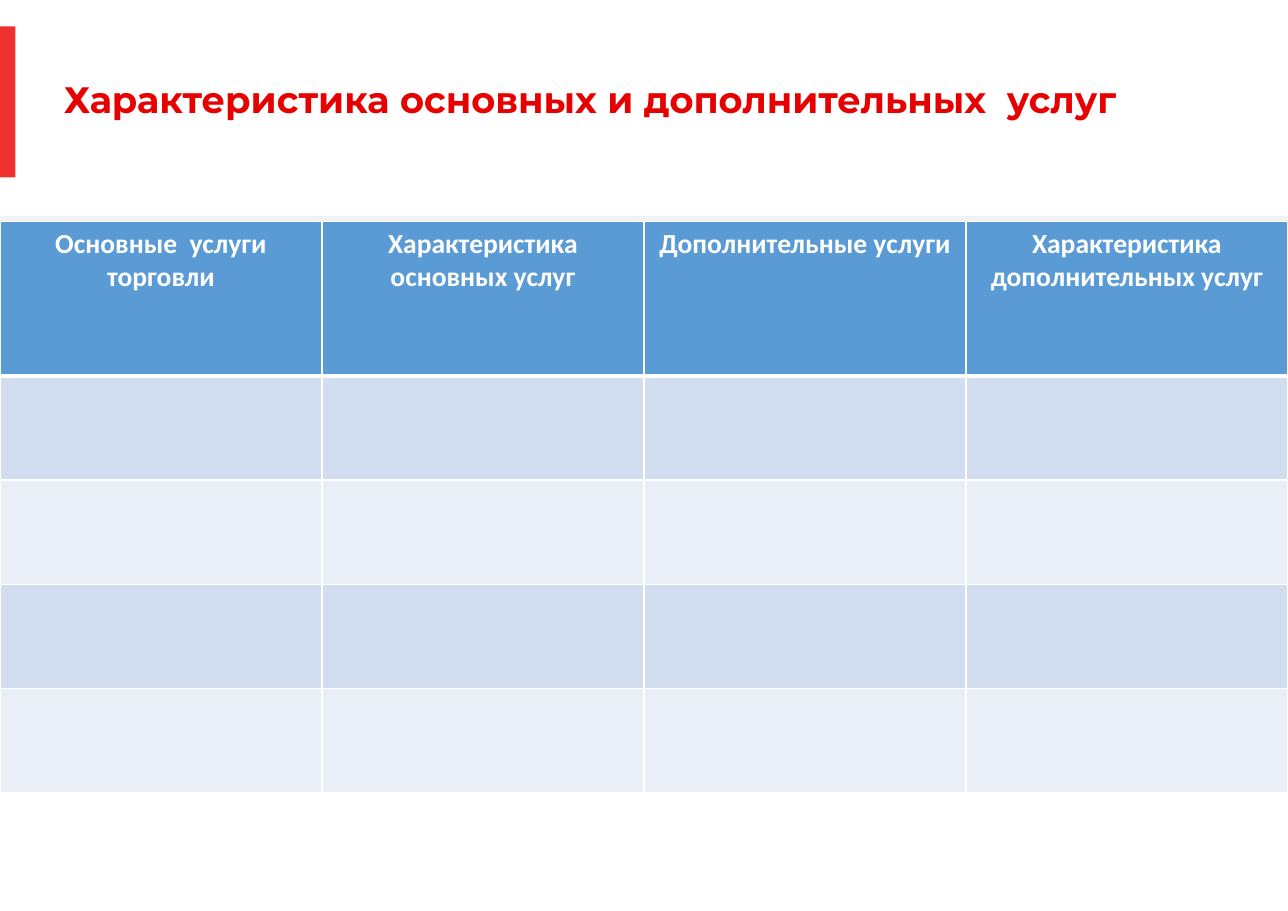
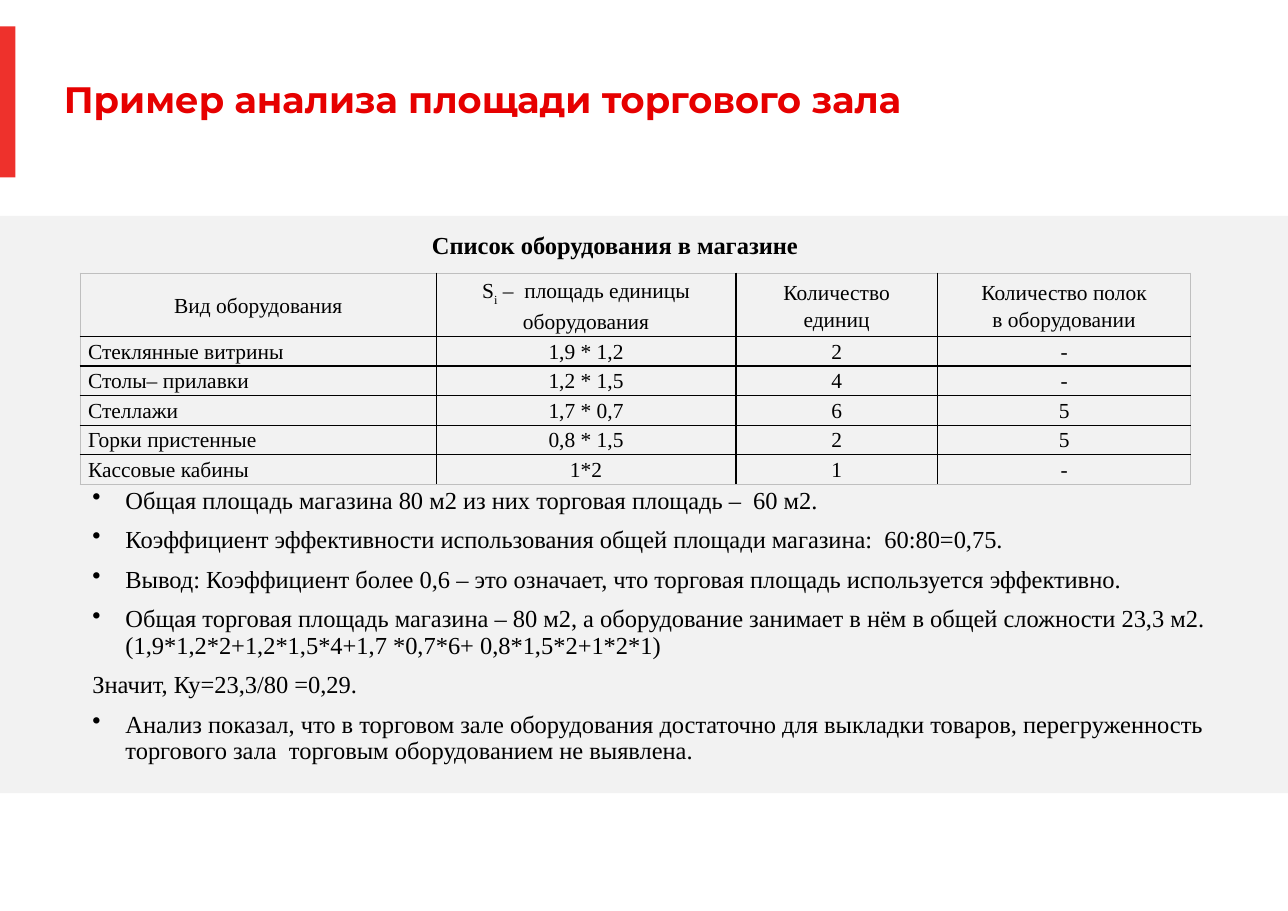
from dataclasses import dataclass

from lxml.etree import SubElement
from pptx import Presentation
from pptx.dml.color import RGBColor
from pptx.enum.shapes import MSO_SHAPE as Shape
from pptx.enum.text import MSO_ANCHOR as Anchor, PP_ALIGN as Align
from pptx.oxml.ns import qn
from pptx.util import Inches, Pt


@dataclass(frozen=True)
class Theme:
    band: str = "F2F2F2"
    bar: str = "EE312C"
    title: str = "E60000"
    text: str = "000000"
    white: str = "FFFFFF"
    header: str = "5B9BD5"
    stripes: tuple = ("D2DEEF", "EAEFF7")
    edge: str = "BFBFBF"
    title_font = {"name": "Montserrat", "size": Pt(24), "bold": True}
    header_font = {"name": "Calibri", "size": Pt(18), "bold": True}
    cell_font = {"name": "Times New Roman", "size": Pt(14), "bold": False}
    body_font = {"name": "Times New Roman", "size": Pt(16), "bold": False}
    caption_font = {"name": "Times New Roman", "size": Pt(16), "bold": True}


theme = Theme()
presentation = Presentation()
presentation.slide_width, presentation.slide_height = Inches(11.69), Inches(8.27)

# The grid has 100 columns and 100 rows
COLUMN = presentation.slide_width / 100
ROW = presentation.slide_height / 100


def area(left, top, width, height):
    return int(left * COLUMN), int(top * ROW), int(width * COLUMN), int(height * ROW)


def write(frame, text, font, color, **paragraph_format):
    """One paragraph per line; a piece between underscores is a subscript."""
    frame.word_wrap = True
    for number, line in enumerate(text.split("\n")):
        paragraph = frame.add_paragraph() if number else frame.paragraphs[0]
        for name, value in paragraph_format.items():
            if number or name != "space_before":
                setattr(paragraph, name, value)
        for place, piece in enumerate(line.split("_")):
            run = paragraph.add_run()
            run.text = piece
            for name, value in font.items():
                setattr(run.font, name, value)
            run.font.color.rgb = RGBColor.from_string(color)
            if place % 2:
                run._r.get_or_add_rPr().set("baseline", "-25000")


# Content
services = {
    "title": "Характеристика основных и дополнительных  услуг",
    "cells": [
        ["Основные  услуги торговли", "Характеристика основных услуг",
         "Дополнительные услуги", "Характеристика дополнительных услуг"],
        *[[""] * 4 for _ in range(4)],
    ],
    "corner": (0, 24.3),
    "columns": [25] * 4,
    "rows": [16.93] + [11.46] * 4,
    "font": theme.header_font, "color": theme.white, "spacing": 1.0,
    "line": theme.white, "edge": theme.white, "header_rule": 3,
    "fills": (theme.header, *theme.stripes),
    "first_align": Align.CENTER,
    "header_format": {},
    "cell_format": {},
}
tight = {"margin_left": Inches(0.07), "margin_right": Inches(0.07),
         "margin_top": 0, "margin_bottom": 0}
equipment = {
    "title": "Пример анализа площади торгового зала",
    "cells": [
        ["Вид оборудования", "S_i_ –  площадь единицы оборудования",
         "Количество\nединиц", "Количество полок\nв оборудовании"],
        ["Стеклянные витрины", "1,9 * 1,2", "2", "-"],
        ["Столы– прилавки", "1,2 * 1,5", "4", "-"],
        ["Стеллажи", "1,7 * 0,7", "6", "5"],
        ["Горки пристенные", "0,8 * 1,5", "2", "5"],
        ["Кассовые кабины", "1*2", "1", "-"],
    ],
    "corner": (6.24, 30),
    "columns": [27.63, 23.27, 15.65, 19.67],
    "rows": [6.4] + [2.97] * 5,
    "font": theme.cell_font, "color": theme.text, "spacing": 1.15,
    "line": theme.text, "edge": theme.edge, "header_rule": 1,
    "fills": None,
    "first_align": Align.JUSTIFY,
    "header_format": {**tight, "vertical_anchor": Anchor.MIDDLE},
    "cell_format": tight,
}
caption = "Список оборудования в магазине"
unbulleted = "Значит, Ку=23,3/80 =0,29."
findings = [
    "Общая площадь магазина 80 м2 из них торговая площадь –  60 м2.",
    "Коэффициент эффективности использования общей площади магазина:  60:80=0,75.",
    "Вывод: Коэффициент более 0,6 – это означает, что торговая площадь "
    "используется эффективно.",
    "Общая торговая площадь магазина – 80 м2, а оборудование занимает в нём "
    "в общей сложности 23,3 м2. (1,9*1,2*2+1,2*1,5*4+1,7 *0,7*6+ 0,8*1,5*2+1*2*1)",
    unbulleted,
    "Анализ показал, что в торговом зале оборудования достаточно для выкладки "
    "товаров, перегруженность торгового зала  торговым оборудованием не выявлена.",
]

for content in (services, equipment):
    slide = presentation.slides.add_slide(presentation.slide_layouts[6])

    # Band, side bar and title
    for place, color in ((area(0, 23.7, 100, 63.36), theme.band),
                         (area(0, 2.9, 1.2, 16.57), theme.bar)):
        shape = slide.shapes.add_shape(Shape.RECTANGLE, *place)
        shape.shadow.inherit = False
        shape.fill.solid()
        shape.fill.fore_color.rgb = RGBColor.from_string(color)
        shape.line.fill.background()
    frame = slide.shapes.add_textbox(*area(4.96, 8.95, 90.6, 4.35)).text_frame
    for name, value in {"margin_left": 0, "margin_right": 0, "margin_top": 0,
                        "margin_bottom": 0, "vertical_anchor": Anchor.MIDDLE}.items():
        setattr(frame, name, value)
    write(frame, content["title"], theme.title_font, theme.title, line_spacing=0.9)

    # Table
    columns, rows = content["columns"], content["rows"]
    place = area(*content["corner"], sum(columns), sum(rows))
    table = slide.shapes.add_table(len(rows), len(columns), *place).table
    table.first_row = table.horz_banding = False
    for column, width in zip(table.columns, columns):
        column.width = int(width * COLUMN)
    for row, height in zip(table.rows, rows):
        row.height = int(height * ROW)

    for r, texts in enumerate(content["cells"]):
        for c, text in enumerate(texts):
            cell = table.cell(r, c)
            cell_format = content["cell_format" if r else "header_format"]
            for name, value in cell_format.items():
                setattr(cell, name, value)
            if text:
                align = content["first_align"] if r and not c else Align.CENTER
                write(cell.text_frame, text, content["font"], content["color"],
                      alignment=align, line_spacing=content["spacing"])

            # Borders come before the fill in the cell properties
            outer = {"L": c == 0, "R": c == len(columns) - 1,
                     "T": r == 0, "B": r == len(rows) - 1}
            properties = cell._tc.get_or_add_tcPr()
            for side, is_outer in outer.items():
                under_header = (r, side) in ((0, "B"), (1, "T"))
                width = content["header_rule"] if under_header else 1
                border = SubElement(properties, qn(f"a:ln{side}"), w=str(Pt(width)))
                solid = SubElement(border, qn("a:solidFill"))
                SubElement(solid, qn("a:srgbClr"),
                           val=content["edge" if is_outer else "line"])
            if content["fills"]:
                header, *stripes = content["fills"]
                cell.fill.solid()
                cell.fill.fore_color.rgb = RGBColor.from_string(
                    stripes[(r - 1) % 2] if r else header)
            else:
                cell.fill.background()

# Caption above the equipment table
frame = slide.shapes.add_textbox(*area(30.4, 24.67, 34.7, 4.47)).text_frame
frame.vertical_anchor = Anchor.MIDDLE
write(frame, caption, theme.caption_font, theme.text, alignment=Align.CENTER)

# Findings below it
frame = slide.shapes.add_textbox(*area(6.24, 52.84, 93, 44.14)).text_frame
for name, value in {"margin_left": Inches(0.11), "margin_right": Inches(0.11),
                    "margin_top": Inches(0.06), "margin_bottom": Inches(0.06)}.items():
    setattr(frame, name, value)
write(frame, "\n".join(findings), theme.body_font, theme.text,
      line_spacing=0.9, space_before=Pt(8.6))
for paragraph in frame.paragraphs:
    if paragraph.text != unbulleted:
        properties = paragraph._p.get_or_add_pPr()
        properties.set("marL", str(Inches(0.3)))
        properties.set("indent", str(-Inches(0.3)))
        SubElement(properties, qn("a:buChar"), char="•")

presentation.save("out.pptx")
